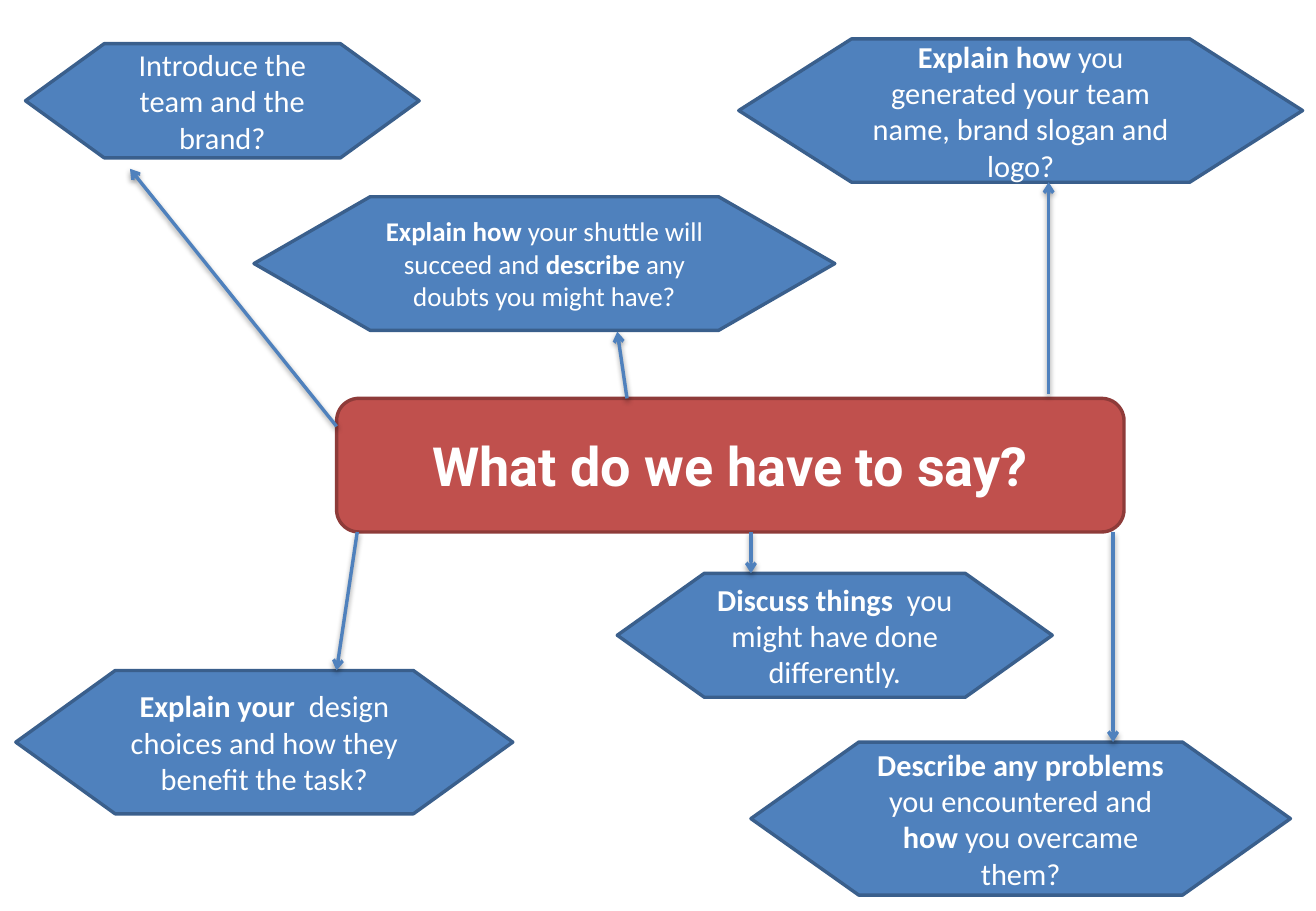
from dataclasses import dataclass

from lxml import etree
from pptx import Presentation
from pptx import util as u
from pptx.dml.color import RGBColor
from pptx.enum import shapes, text
from pptx.oxml import parse_xml
from pptx.oxml.ns import nsdecls, qn


@dataclass(frozen=True)
class Theme:
    question_fill: str = "C0504D"
    question_edge: str = "8E3B39"
    prompt_fill: str = "4F81BD"
    prompt_edge: str = "3A5F8C"
    arrow: str = "4F81BD"
    ink: str = "FFFFFF"
    question_font: str = "Roboto"
    prompt_font: str = "Calibri"
    question_size: int = 32
    prompt_size: int = 18
    compact_size: int = 16
    stroke: int = 2


SHADOW = (
    f'<a:effectLst {nsdecls("a")}>'
    '<a:outerShdw blurRad="40000" dist="20000" dir="5400000" rotWithShape="0">'
    '<a:srgbClr val="000000"><a:alpha val="38000"/></a:srgbClr>'
    '</a:outerShdw></a:effectLst>'
)


def write_text(frame, wording, *, font, size, color, bold=False):
    frame.word_wrap = True
    frame.auto_size = text.MSO_AUTO_SIZE.NONE
    frame.vertical_anchor = text.MSO_ANCHOR.MIDDLE
    paragraph = frame.paragraphs[0]
    paragraph.alignment = text.PP_ALIGN.CENTER
    for index, part in enumerate(wording.split("**")):
        if part:
            run = paragraph.add_run()
            run.text = part
            run.font.name = font
            run.font.size = u.Pt(size)
            run.font.bold = bold or index % 2 == 1
            run.font.color.rgb = RGBColor.from_string(color)


class MindMap:
    def __init__(self, slide, theme):
        self.slide = slide
        self.theme = theme

    def panel(self, kind, box, fill, edge):
        panel = self.slide.shapes.add_shape(kind, *map(u.Inches, box))
        panel.shadow.inherit = False
        panel.fill.solid()
        panel.fill.fore_color.rgb = RGBColor.from_string(fill)
        panel.line.color.rgb = RGBColor.from_string(edge)
        panel.line.width = u.Pt(self.theme.stroke)
        return panel

    def question(self, wording, box):
        theme = self.theme
        self.panel(shapes.MSO_SHAPE.ROUNDED_RECTANGLE, box,
                   theme.question_fill, theme.question_edge)
        title = self.slide.shapes.title
        title.left, title.top, title.width, title.height = map(u.Inches, box)
        self.slide.shapes._spTree.append(title._element)
        write_text(title.text_frame, wording, font=theme.question_font,
                   size=theme.question_size, color=theme.ink, bold=True)

    def prompt(self, wording, box, size):
        theme = self.theme
        prompt = self.panel(shapes.MSO_SHAPE.FLOWCHART_PREPARATION, box,
                            theme.prompt_fill, theme.prompt_edge)
        write_text(prompt.text_frame, wording, font=theme.prompt_font,
                   size=size, color=theme.ink)

    def arrow(self, start, end):
        arrow = self.slide.shapes.add_connector(
            shapes.MSO_CONNECTOR.STRAIGHT, *map(u.Inches, start + end))
        arrow.line.color.rgb = RGBColor.from_string(self.theme.arrow)
        arrow.line.width = u.Pt(self.theme.stroke)
        etree.SubElement(arrow.line._get_or_add_ln(), qn("a:tailEnd"), type="arrow")
        arrow._element.spPr.append(parse_xml(SHADOW))


def main():
    deck = Presentation()
    deck.slide_width, deck.slide_height = u.Inches(10.83), u.Inches(7.5)
    theme = Theme()
    mind_map = MindMap(deck.slides.add_slide(deck.slide_layouts[5]), theme)

    mind_map.question("What do we have to say?", (2.77, 3.28, 6.48, 1.1))

    prompts = [
        ("Introduce the team and the brand?",
         (0.21, 0.36, 3.24, 0.94), theme.prompt_size),
        ("**Explain how **you generated your team name, brand slogan and logo?",
         (6.08, 0.32, 4.64, 1.18), theme.prompt_size),
        ("**Explain your ** design choices and how they benefit the task?",
         (0.13, 5.52, 4.09, 1.18), theme.prompt_size),
        ("**Describe any problems **you encountered and **how **you overcame them?",
         (6.18, 6.11, 4.44, 1.26), theme.prompt_size),
        ("**Explain how **your shuttle will succeed and **describe** any doubts you might have?",
         (2.09, 1.62, 4.78, 1.1), theme.compact_size),
        ("**Discuss things ** you might have done differently.",
         (5.08, 4.72, 3.58, 1.02), theme.prompt_size),
    ]
    for wording, box, size in prompts:
        mind_map.prompt(wording, box, size)

    arrows = [
        ((2.77, 3.51), (1.07, 1.39)),
        ((6.18, 4.38), (6.18, 4.72)),
        ((8.63, 3.24), (8.63, 1.5)),
        ((2.94, 4.38), (2.77, 5.52)),
        ((9.16, 4.38), (9.16, 6.11)),
        ((5.16, 3.28), (5.08, 2.73)),
    ]
    for start, end in arrows:
        mind_map.arrow(start, end)

    deck.save("out.pptx")


if __name__ == "__main__":
    main()
